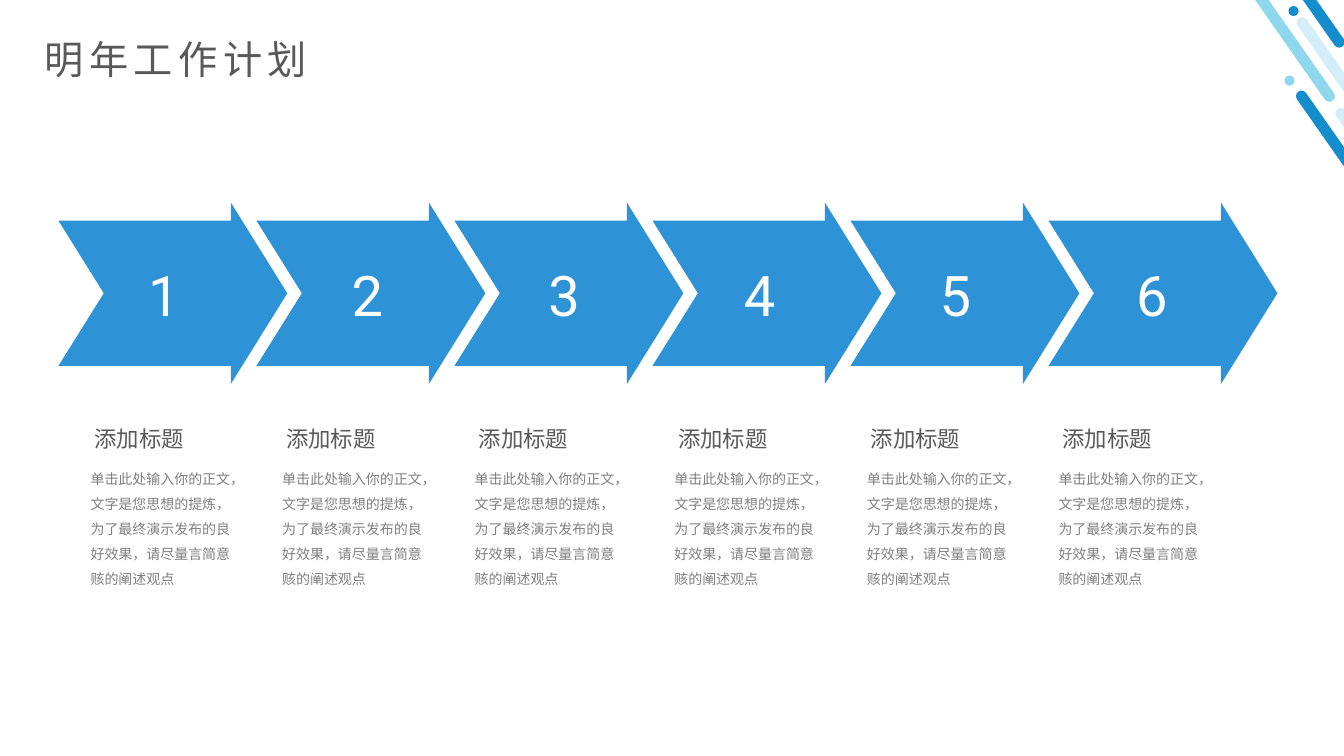
from dataclasses import dataclass

import pptx
import pptx.dml.color
import pptx.enum.shapes
import pptx.enum.text
import pptx.oxml
import pptx.oxml.ns
import pptx.util

Inches = pptx.util.Inches
MSO_SHAPE = pptx.enum.shapes.MSO_SHAPE


@dataclass(frozen=True)
class TextStyle:
    size: float
    leading: float
    color: str
    font: str = "Noto Sans CJK SC"
    tracking: float = 0


@dataclass(frozen=True)
class Theme:
    arrow: str = "2D92D6"
    deep: str = "138DCC"
    sky: str = "8FD7ED"
    sky_dot: str = "90D7EE"
    pale: str = "D3EEF9"
    title: TextStyle = TextStyle(28, 36, "595959", tracking=4)
    number: TextStyle = TextStyle(40, 49, "FFFFFF", font="Roboto")
    heading: TextStyle = TextStyle(16, 20.6, "595959")
    body: TextStyle = TextStyle(10, 17.9, "808080")


@dataclass(frozen=True)
class Bar:
    left: float
    top: float
    length: float
    color: str


@dataclass(frozen=True)
class Dot:
    left: float
    top: float
    color: str


@dataclass(frozen=True)
class Step:
    number: str
    number_left: float
    text_left: float


THEME = Theme()
TITLE = "明年工作计划"
HEADING = "添加标题"
BODY = "单击此处输入你的正文，文字是您思想的提炼，为了最终演示发布的良好效果，请尽量言简意赅的阐述观点"

DECORATION = (
    Bar(13.45, 0.71, 2.19, THEME.deep),
    Dot(12.74, 0.75, THEME.sky_dot),
    Bar(13.84, 0.88, 2.19, THEME.pale),
    Bar(12.37, -1.51, 2.76, THEME.sky),
    Bar(13.62, -0.07, 2.76, THEME.pale),
    Bar(12.63, -1.53, 2.19, THEME.deep),
    Dot(12.78, 0.06, THEME.deep),
)
STEPS = (
    Step("1", 1.37, 0.8),
    Step("2", 3.39, 2.7),
    Step("3", 5.34, 4.61),
    Step("4", 7.28, 6.59),
    Step("5", 9.22, 8.5),
    Step("6", 11.17, 10.4),
)

BAR_WIDTH, BAR_ANGLE, DOT_SIZE = 0.11, 325, 0.1
FIRST_ARROW, LAST_ARROW, ARROW_TOP = 0.58, 10.4, 2.01
ARROW_PITCH = (LAST_ARROW - FIRST_ARROW) / (len(STEPS) - 1)
ARROW_POINTS = ((1.71, 0), (2.27, 0.9), (1.71, 1.8), (1.71, 1.62),
                (0, 1.62), (0.45, 0.9), (0, 0.18), (1.71, 0.18))


def paint(sp, color: str) -> None:
    sp.shadow.inherit = False
    sp.fill.solid()
    sp.fill.fore_color.rgb = pptx.dml.color.RGBColor.from_string(color)
    sp.line.fill.background()


def write(sp, text: str, style: TextStyle) -> None:
    tf = sp.text_frame
    tf.text = text
    tf.word_wrap = True
    tf.auto_size = pptx.enum.text.MSO_AUTO_SIZE.NONE
    tf.vertical_anchor = pptx.enum.text.MSO_ANCHOR.TOP
    p = tf.paragraphs[0]
    p.alignment = pptx.enum.text.PP_ALIGN.LEFT
    p.space_before = pptx.util.Pt(0)
    p.line_spacing = pptx.util.Pt(style.leading)
    r = p.runs[0]
    r.font.size = pptx.util.Pt(style.size)
    r.font.name = style.font
    r.font.color.rgb = pptx.dml.color.RGBColor.from_string(style.color)
    rPr = r.font._element
    ea = pptx.oxml.parse_xml(f'<a:ea {pptx.oxml.ns.nsdecls("a")} typeface="{style.font}"/>')
    rPr.find(pptx.oxml.ns.qn("a:latin")).addnext(ea)
    if style.tracking:
        rPr.set("spc", str(int(style.tracking * 100)))


def add_text(s, left: float, top: float, width: float, height: float,
             text: str, style: TextStyle) -> None:
    sp = s.shapes.add_textbox(Inches(left), Inches(top), Inches(width), Inches(height))
    write(sp, text, style)


def add_title(s) -> None:
    sp = s.shapes.title
    sp.left, sp.top = Inches(0.34), Inches(0.27)
    sp.width, sp.height = Inches(12.9), Inches(0.57)
    write(sp, TITLE, THEME.title)


def add_decoration(s) -> None:
    """Draw the slanted bars and dots of the upper right corner as one group."""
    shapes = s.shapes.add_group_shape().shapes
    for item in DECORATION:
        left, top = Inches(item.left), Inches(item.top)
        if isinstance(item, Bar):
            sp = shapes.add_shape(MSO_SHAPE.ROUNDED_RECTANGLE, left, top,
                                  Inches(BAR_WIDTH), Inches(item.length))
            sp.adjustments[0] = 0.5
            sp.rotation = BAR_ANGLE
        else:
            sp = shapes.add_shape(MSO_SHAPE.OVAL, left, top,
                                  Inches(DOT_SIZE), Inches(DOT_SIZE))
        paint(sp, item.color)


def add_arrow(s, left: float) -> None:
    points = [(Inches(left + x), Inches(ARROW_TOP + y)) for x, y in ARROW_POINTS]
    outline = s.shapes.build_freeform(*points[0])
    outline.add_line_segments(points[1:], close=True)
    paint(outline.convert_to_shape(), THEME.arrow)


def add_step(s, index: int, step: Step) -> None:
    add_arrow(s, FIRST_ARROW + index * ARROW_PITCH)
    add_text(s, step.number_left, 2.52, 0.9, 0.77, step.number, THEME.number)
    add_text(s, step.text_left, 4.54, 1.62, 1.33, BODY, THEME.body)
    add_text(s, step.text_left + 0.04, 4.15, 1.53, 0.37, HEADING, THEME.heading)


def main() -> None:
    prs = pptx.Presentation()
    prs.slide_width, prs.slide_height = Inches(13.33), Inches(7.5)
    s = prs.slides.add_slide(prs.slide_layouts.get_by_name("Title Only"))
    add_decoration(s)
    add_title(s)
    for index, step in enumerate(STEPS):
        add_step(s, index, step)
    prs.save("out.pptx")


if __name__ == "__main__":
    main()
